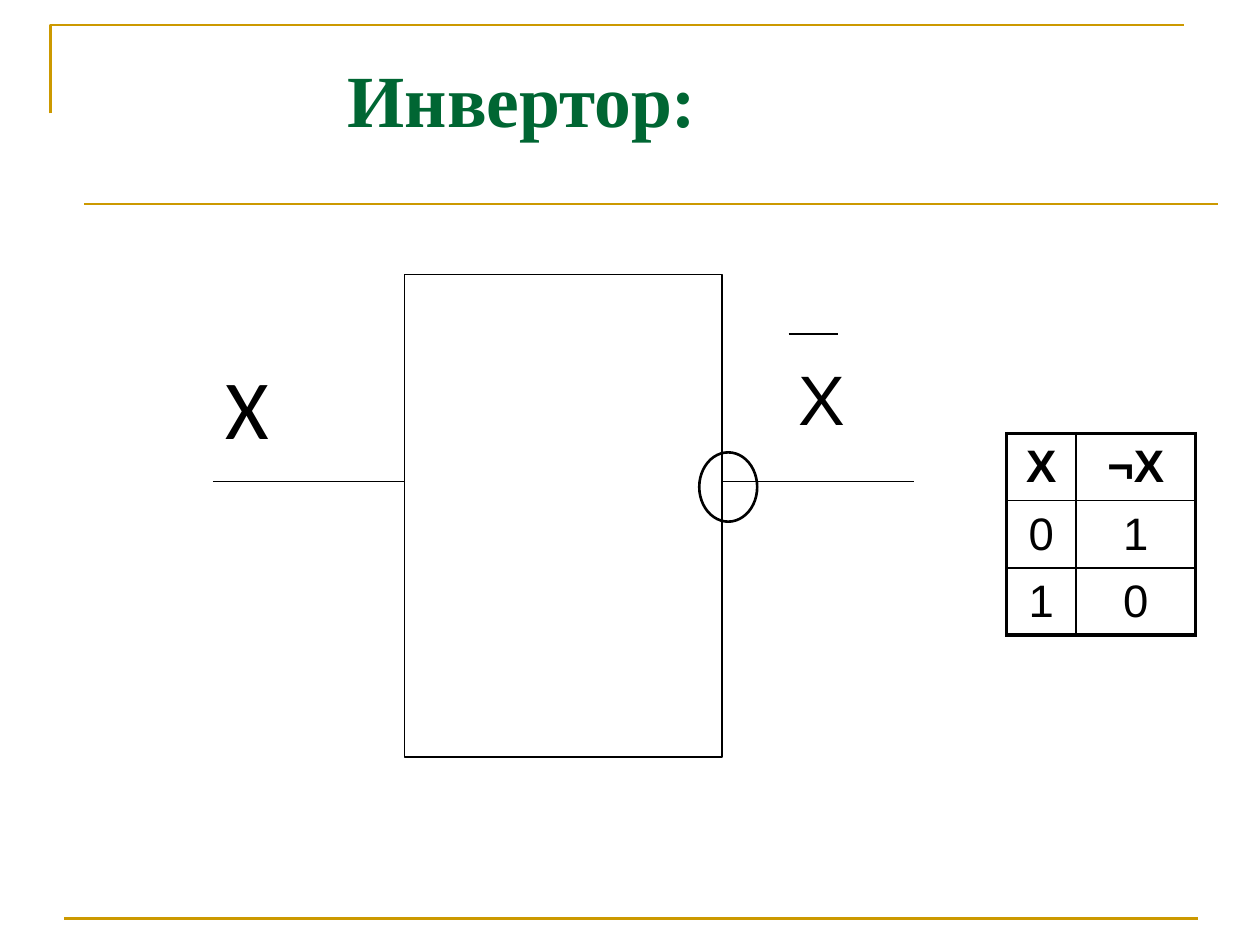
import pptx
import pptx.util
import pptx.dml.color
import pptx.enum.shapes
import pptx.enum.text
import pptx.oxml
import pptx.oxml.ns

Pt = pptx.util.Pt
RGB = pptx.dml.color.RGBColor.from_string
MSO_SHAPE = pptx.enum.shapes.MSO_SHAPE
ANCHOR = pptx.enum.text.MSO_ANCHOR

theme = {
    "rule": "CC9900", "title": "006633", "ink": "000000",
    "title_size": 42, "input_size": 48, "output_size": 40, "table_size": 26,
    "thin": 0.75, "medium": 1.5, "inner": 1, "outer": 2.25,
}

prs = pptx.Presentation()
prs.slide_width = pptx.util.Inches(10)
prs.slide_height = pptx.util.Inches(7.5)
col = prs.slide_width / 100
row = prs.slide_height / 75
s = prs.slides.add_slide(prs.slide_layouts[6])


def add_line(shapes, x1, x2, y, color, width):
    ln = shapes.add_connector(
        pptx.enum.shapes.MSO_CONNECTOR.STRAIGHT,
        int(x1 * col), int(y * row), int(x2 * col), int(y * row))
    ln.line.color.rgb = RGB(theme[color])
    ln.line.width = Pt(theme[width])
    ln._element.spPr.append(pptx.oxml.parse_xml(
        f"<a:effectLst {pptx.oxml.ns.nsdecls('a')}/>"))


def add_text(shapes, box, text, font, size, color, bold=False):
    x, y, w, h = box
    tf = shapes.add_textbox(
        int(x * col), int(y * row), int(w * col), int(h * row)).text_frame
    tf.word_wrap = True
    p = tf.paragraphs[0]
    p.text = text
    p.font.name = font
    p.font.size = Pt(theme[size])
    p.font.bold = bold
    p.font.color.rgb = RGB(theme[color])
    return tf


fb = s.shapes.build_freeform(4.2, 9.2, scale=(col, row))
fb.add_line_segments([(4.2, 2.5), (94.2, 2.5)], close=False)
corner = fb.convert_to_shape()
corner.shadow.inherit = False
corner.fill.background()
corner.line.color.rgb = RGB(theme["rule"])
corner.line.width = Pt(theme["medium"])

for x, y in [(5.1, 72.9), (6.7, 16.2)]:
    add_line(s.shapes, x, x + 90, y, "rule", "medium")

tf = add_text(s.shapes, (26.6, 3.7, 37.5, 8.1), "Инвертор:",
              "Times New Roman", "title_size", "title", True)
tf.vertical_anchor = ANCHOR.MIDDLE
tf.word_wrap = False

gate = s.shapes.add_group_shape()
for shapes, kind, box, width in [
    (gate.shapes, MSO_SHAPE.RECTANGLE, (32.1, 21.8, 25.2, 38.3), "thin"),
    (s.shapes, MSO_SHAPE.OVAL, (55.5, 35.9, 4.6, 5.5), "medium"),
]:
    x, y, w, h = box
    sp = shapes.add_shape(kind, int(x * col), int(y * row), int(w * col), int(h * row))
    sp.shadow.inherit = False
    sp.fill.background()
    sp.line.color.rgb = RGB(theme["ink"])
    sp.line.width = Pt(theme[width])

for x in (16.9, 57.3):
    add_line(gate.shapes, x, x + 15.2, 38.2, "ink", "thin")
for x, w, text, font, size in [
    (16.9, 15.2, "X", "Calibri", "input_size"),
    (62.4, 20.2, "Х", "Arial", "output_size"),
]:
    tf = add_text(gate.shapes, (x, 27.2, w, 21.9), text, font, size, "ink")
    tf.margin_top = int(row)
    tf.paragraphs[0].space_after = Pt(10)
add_line(s.shapes, 62.6, 66.5, 26.5, "ink", "thin")

truth = [["Х", "¬Х"], ["0", "1"], ["1", "0"]]
widths = [5.5, 9.5]
row_height = 5.33
tbl = s.shapes.add_table(
    len(truth), len(widths), int(79.9 * col), int(34.4 * row),
    int(sum(widths) * col), int(len(truth) * row_height * row)).table
tbl.first_row = False
tbl.horz_banding = False
for c, w in enumerate(widths):
    tbl.columns[c].width = int(w * col)
for r, values in enumerate(truth):
    tbl.rows[r].height = int(row_height * row)
    for c, value in enumerate(values):
        cell = tbl.cell(r, c)
        cell.vertical_anchor = ANCHOR.MIDDLE
        p = cell.text_frame.paragraphs[0]
        p.text = value
        p.alignment = pptx.enum.text.PP_ALIGN.CENTER
        p.font.name = "Arial"
        p.font.size = Pt(theme["table_size"])
        p.font.bold = r == 0
        p.font.color.rgb = RGB(theme["ink"])
        edges = {"L": c == 0, "R": c == len(widths) - 1,
                 "T": r == 0, "B": r == len(truth) - 1}
        for side, outside in edges.items():
            width = Pt(theme["outer" if outside else "inner"])
            cell._tc.get_or_add_tcPr().append(pptx.oxml.parse_xml(
                f'<a:ln{side} {pptx.oxml.ns.nsdecls("a")} w="{width}"><a:solidFill>'
                f'<a:srgbClr val="{theme["ink"]}"/></a:solidFill></a:ln{side}>'))
        cell.fill.background()

prs.save("out.pptx")
